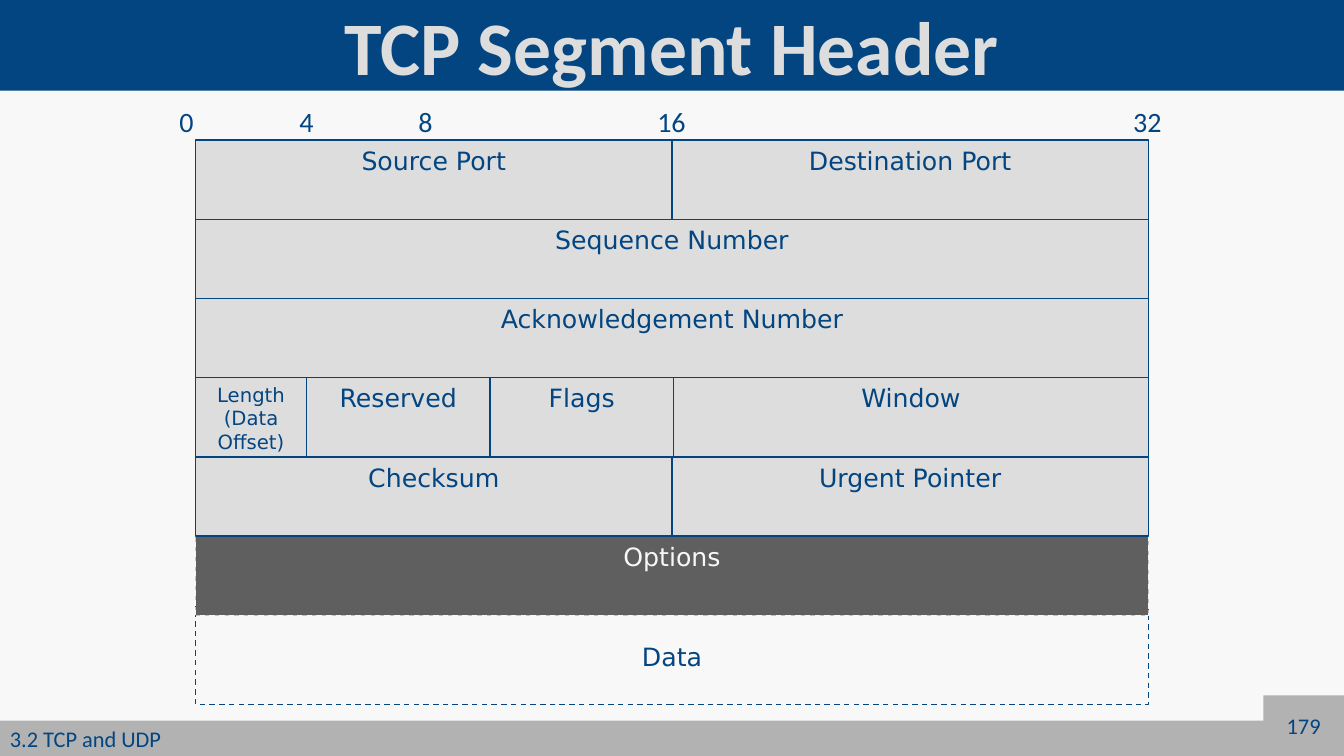
from dataclasses import dataclass

from pptx import Presentation
from pptx.dml.color import RGBColor
from pptx.enum.dml import MSO_LINE
from pptx.enum.shapes import MSO_SHAPE
from pptx.enum.text import MSO_ANCHOR, PP_ALIGN
from pptx.util import Inches, Pt

RECTANGLE = MSO_SHAPE.RECTANGLE
DASH = MSO_LINE.DASH
TOP, MIDDLE = MSO_ANCHOR.TOP, MSO_ANCHOR.MIDDLE
LEFT, CENTER = PP_ALIGN.LEFT, PP_ALIGN.CENTER


@dataclass(frozen=True)
class Theme:
    blue: str = "034581"
    paper: str = "F8F8F8"
    light: str = "DDDDDD"
    bar: str = "B2B2B2"
    dark: str = "5F5F5F"
    heading_font: str = "Calibri"
    field_font: str = "DejaVu Sans"
    title_size: int = 54
    scale_size: int = 20
    field_size: int = 18
    footer_size: int = 16
    small_size: int = 14


theme = Theme()


def write(shape, text, font_name, size, color, align=CENTER, anchor=MIDDLE, bold=False):
    frame = shape.text_frame
    frame.vertical_anchor = anchor
    paragraph = frame.paragraphs[0]
    paragraph.text = text
    paragraph.alignment = align
    paragraph.font.name = font_name
    paragraph.font.size = Pt(size)
    paragraph.font.bold = bold
    paragraph.font.color.rgb = RGBColor.from_string(color)


def add_box(parent, x, y, width, height, fill=None, line=None, dash=None):
    """Add a flat rectangle; without a fill or line colour that part stays empty."""
    box = parent.add_shape(RECTANGLE, Inches(x), Inches(y), Inches(width), Inches(height))
    box.shadow.inherit = False
    box.text_frame.word_wrap = True
    if fill:
        box.fill.solid()
        box.fill.fore_color.rgb = RGBColor.from_string(fill)
    else:
        box.fill.background()
    if line:
        box.line.color.rgb = RGBColor.from_string(line)
        box.line.width = Pt(1)
        box.line.dash_style = dash
    else:
        box.line.fill.background()
    return box


presentation = Presentation()
presentation.slide_width = Inches(13.33)
presentation.slide_height = Inches(7.5)
slide = presentation.slides.add_slide(presentation.slide_layouts[6])
slide.background.fill.solid()
slide.background.fill.fore_color.rgb = RGBColor.from_string(theme.paper)

# Title bar and footer
title = add_box(slide.shapes, 0, 0, 13.33, 0.9, theme.blue)
write(title, "TCP Segment Header", theme.heading_font, theme.title_size, theme.light, bold=True)
footer = add_box(slide.shapes, 0, 7.15, 13.33, 0.35, theme.bar)
write(footer, "3.2 TCP and UDP", theme.heading_font, theme.footer_size, theme.blue, align=LEFT)
page_number = add_box(slide.shapes, 12.53, 6.9, 0.8, 0.6, theme.bar)
write(page_number, "179", theme.heading_font, theme.footer_size, theme.blue)

# Segment diagram: payload lies behind the header rows
HEADER_LEFT, HEADER_TOP = 1.94, 1.39
HEADER_WIDTH = 9.45
HALF = HEADER_WIDTH / 2
OPTIONS_TOP = 5.32
header_rows = [
    [("Source Port", HALF), ("Destination Port", HALF)],
    [("Sequence Number", HEADER_WIDTH)],
    [("Acknowledgement Number", HEADER_WIDTH)],
    [("Length (Data Offset)", 1.1), ("Reserved", 1.82), ("Flags", 1.82), ("Window", 4.71)],
    [("Checksum", HALF), ("Urgent Pointer", HALF)],
]
row_height = (OPTIONS_TOP - HEADER_TOP) / len(header_rows)

segment = slide.shapes.add_group_shape().shapes
payload = add_box(segment, HEADER_LEFT, 6.01, HEADER_WIDTH, 0.98, line=theme.blue, dash=DASH)
payload.text_frame.margin_top = Inches(0.35)
write(payload, "Data", theme.field_font, theme.field_size, theme.blue, anchor=TOP)

options = add_box(segment, HEADER_LEFT, OPTIONS_TOP, HEADER_WIDTH, row_height,
                  theme.dark, theme.paper, DASH)
write(options, "Options", theme.field_font, theme.field_size, theme.paper, anchor=TOP)

for row_index, row in enumerate(header_rows):
    field_left = HEADER_LEFT
    for name, width in row:
        field = add_box(segment, field_left, HEADER_TOP + row_index * row_height,
                        width, row_height, theme.light, theme.blue)
        size = theme.small_size if name.startswith("Length") else theme.field_size
        write(field, name, theme.field_font, size, theme.blue, anchor=TOP)
        field_left += width

# Bit scale above the header
bit_centers = {"0": 1.85, "4": 3.04, "8": 4.22, "16": 6.66, "32": 11.38}
BIT_WIDTH = 0.49
for bit, center in bit_centers.items():
    bit_label = segment.add_textbox(Inches(center - BIT_WIDTH / 2), Inches(0.99),
                                    Inches(BIT_WIDTH), Inches(0.44))
    bit_label.text_frame.word_wrap = False
    write(bit_label, bit, theme.heading_font, theme.scale_size, theme.blue, anchor=TOP)

presentation.save("out.pptx")
